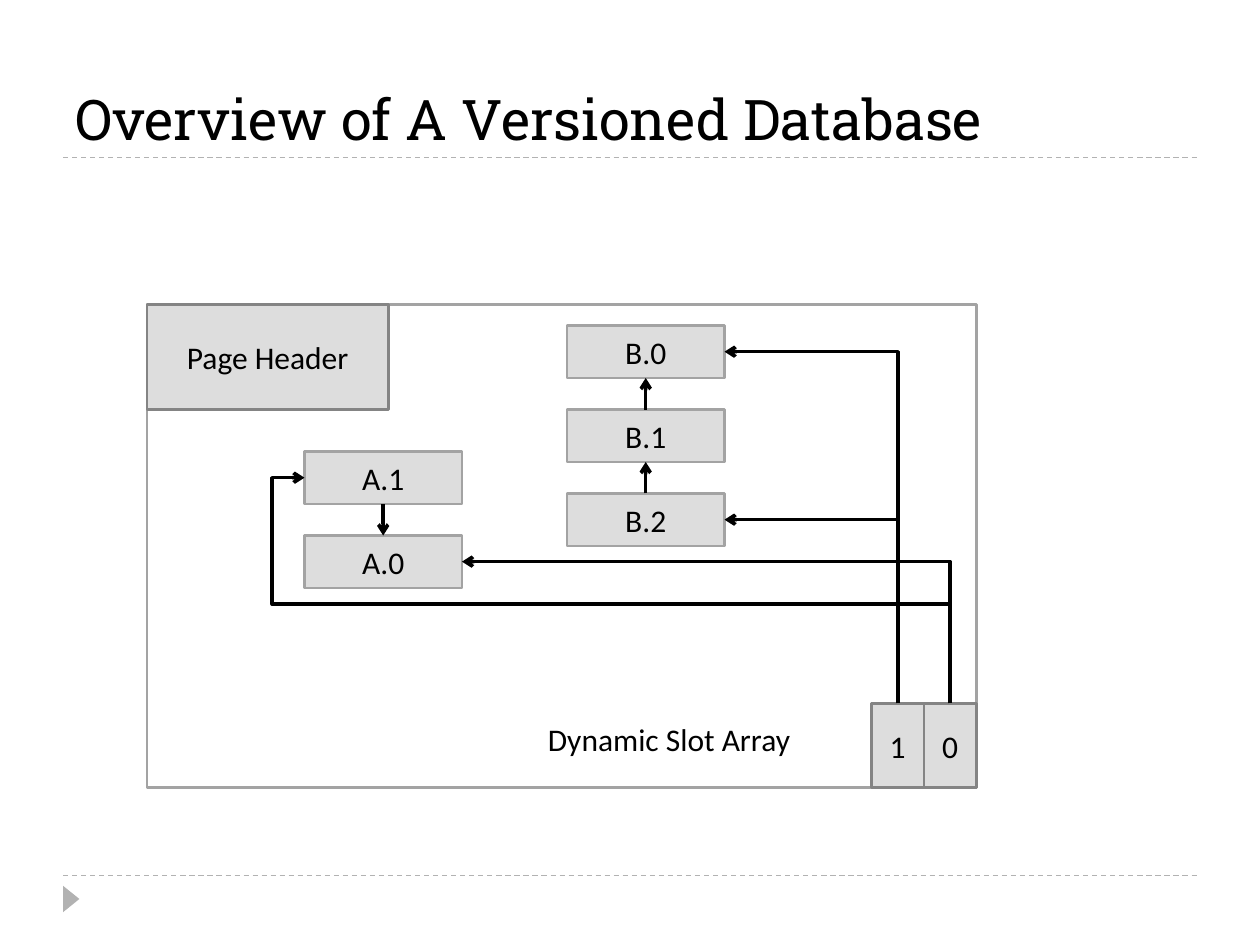
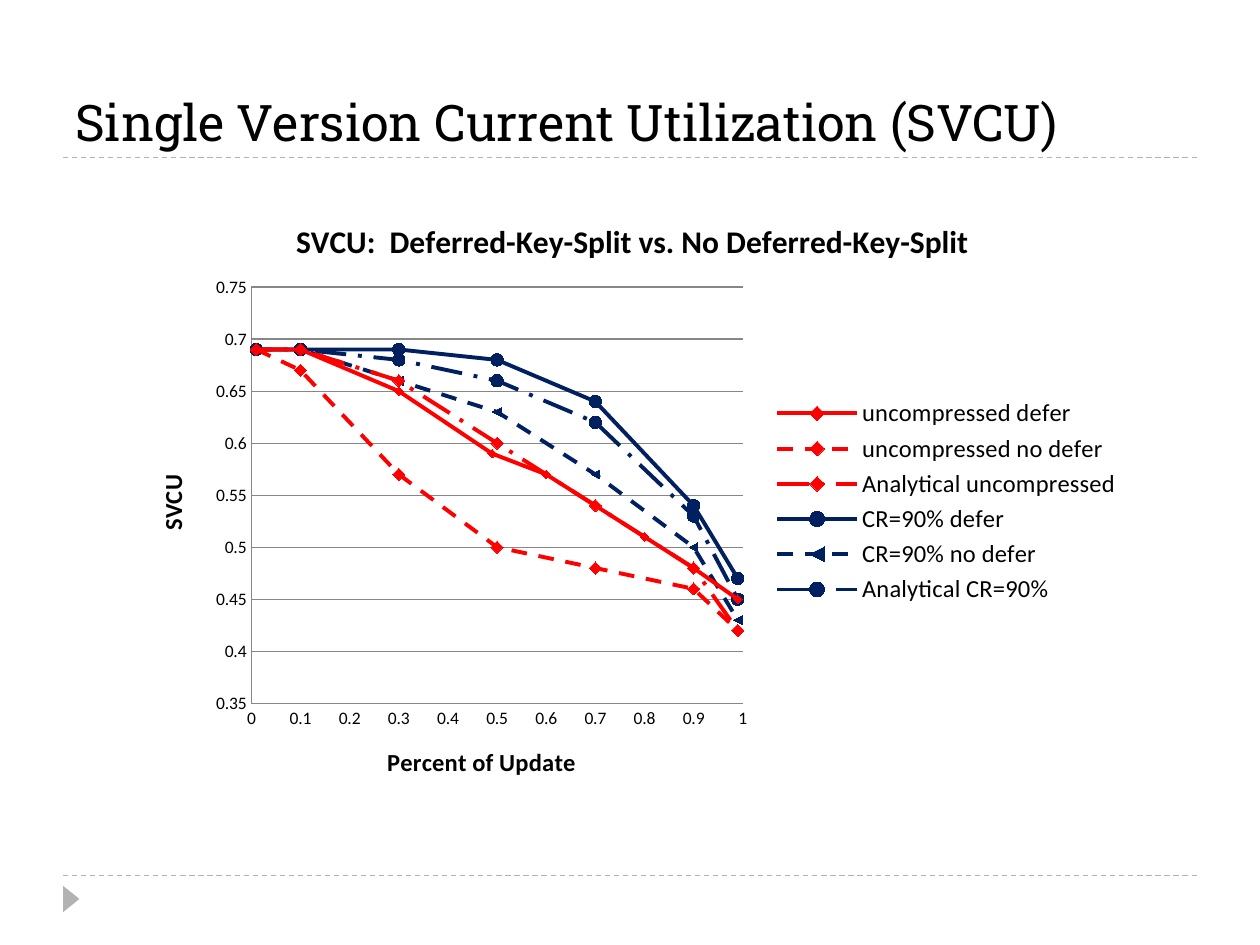
from lxml.etree import SubElement
from pptx import Presentation
from pptx.chart.data import XyChartData
from pptx.dml.color import RGBColor
from pptx.enum.chart import XL_CHART_TYPE, XL_LEGEND_POSITION, XL_MARKER_STYLE, XL_TICK_MARK
from pptx.enum.dml import MSO_LINE
from pptx.enum.shapes import MSO_CONNECTOR, MSO_SHAPE
from pptx.enum.text import MSO_ANCHOR, PP_ALIGN
from pptx.oxml.ns import qn
from pptx.util import Inches, Pt

WIDTH, HEIGHT = 10, 7.5
CELLS_PER_INCH = 12
TITLE_FONT, BODY_FONT = "Roboto Slab", "Calibri"
BLACK, RULE, BOX = "000000", "B2B2B2", "DDDDDD"
BORDER, DARK_BORDER, GRID = "A3A3A3", "848484", "878787"
RED, NAVY = "FF0000", "002060"

RECORD_SIZE = (15, 5)
SLOT_SIZE = (5, 8)
RECORD_STEP = 8

UPDATES = (0.01, 0.1, 0.3, 0.5, 0.7, 0.9, 0.99)
DEFER_UPDATES = (0.01, 0.1, 0.3, 0.49, 0.6, 0.7, 0.8, 0.9, 0.99)
DIAMOND, CIRCLE = XL_MARKER_STYLE.DIAMOND, XL_MARKER_STYLE.CIRCLE
AUTOMATIC = XL_MARKER_STYLE.AUTOMATIC
SOLID, DASH, DASH_DOT = MSO_LINE.SOLID, MSO_LINE.DASH, MSO_LINE.LONG_DASH_DOT
UTILIZATION = [
    ("uncompressed defer", RED, SOLID, AUTOMATIC, 5, DEFER_UPDATES,
     (0.69, 0.69, 0.65, 0.59, 0.57, 0.54, 0.51, 0.48, 0.45)),
    ("uncompressed no defer", RED, DASH, DIAMOND, 7, UPDATES,
     (0.69, 0.67, 0.57, 0.5, 0.48, 0.46, 0.42)),
    ("Analytical uncompressed", RED, DASH_DOT, DIAMOND, 7, UPDATES,
     (0.69, 0.69, 0.66, 0.6, 0.54, 0.48, 0.42)),
    ("CR=90% defer", NAVY, SOLID, CIRCLE, 7, UPDATES,
     (0.69, 0.69, 0.69, 0.68, 0.64, 0.54, 0.47)),
    ("CR=90% no defer", NAVY, DASH, AUTOMATIC, 5, UPDATES,
     (0.69, 0.69, 0.66, 0.63, 0.57, 0.5, 0.43)),
    ("Analytical CR=90%", NAVY, DASH_DOT, CIRCLE, 7, UPDATES,
     (0.69, 0.69, 0.68, 0.66, 0.62, 0.53, 0.45)),
]


def color(value):
    return RGBColor.from_string(value)


def cells(*counts):
    return [Inches(count / CELLS_PER_INCH) for count in counts]


def fill(target, value):
    target.fill.solid()
    target.fill.fore_color.rgb = color(value)


def style_line(line, value, width, dash=None):
    line.color.rgb = color(value)
    line.width = Pt(width)
    if dash:
        line.dash_style = dash


def style_font(font, size, name=BODY_FONT, bold=False):
    font.name, font.size, font.bold = name, Pt(size), bold
    font.color.rgb = color(BLACK)


def add_text(slide, text, box, size, name=BODY_FONT, anchor=MSO_ANCHOR.TOP):
    frame = slide.shapes.add_textbox(*box).text_frame
    frame.word_wrap = True
    frame.vertical_anchor = anchor
    frame.text = text
    style_font(frame.paragraphs[0].font, size, name)


def add_box(slide, column, row, size, text="", border=BORDER, filled=True):
    shape = slide.shapes.add_shape(MSO_SHAPE.RECTANGLE, *cells(column, row, *size))
    shape.shadow.inherit = False
    style_line(shape.line, border, 1.5)
    if filled:
        fill(shape, BOX)
    else:
        shape.fill.background()
    if text:
        frame = shape.text_frame
        frame.text = text
        frame.vertical_anchor = MSO_ANCHOR.MIDDLE
        frame.paragraphs[0].alignment = PP_ALIGN.CENTER
        style_font(frame.paragraphs[0].font, 18)


def add_line(slide, start, end, value, width, dash=None, kind=MSO_CONNECTOR.STRAIGHT):
    connector = slide.shapes.add_connector(kind, *cells(*start, *end))
    style_line(connector.line, value, width, dash)
    SubElement(connector._element.spPr, qn("a:effectLst"))
    return connector


def add_arrow(slide, start, end, kind=MSO_CONNECTOR.STRAIGHT):
    connector = add_line(slide, start, end, BLACK, 2, kind=kind)
    SubElement(connector.line._get_or_add_ln(), qn("a:tailEnd"), type="arrow")
    return connector


def add_bent_arrow(slide, start, end, preset="bentConnector2", adjustments=()):
    rise, run = start[1] - end[1], start[0] - end[0]
    middle_x, middle_y = (start[0] + end[0]) / 2, (start[1] + end[1]) / 2
    connector = add_arrow(
        slide,
        (middle_x - rise / 2, middle_y + run / 2),
        (middle_x + rise / 2, middle_y - run / 2),
        MSO_CONNECTOR.ELBOW,
    )
    properties = connector._element.spPr
    properties.find(qn("a:xfrm")).set("rot", str(270 * 60000))
    geometry = properties.find(qn("a:prstGeom"))
    geometry.set("prst", preset)
    values = geometry.find(qn("a:avLst"))
    for number, share in enumerate(adjustments, 1):
        SubElement(values, qn("a:gd"), name=f"adj{number}", fmla=f"val {round(share * 100000)}")


def add_titled_slide(presentation, title, title_size):
    slide = presentation.slides.add_slide(presentation.slide_layouts[6])
    for row in (83.4, 15):
        add_line(slide, (6, row), (114, row), RULE, 0.75, MSO_LINE.DASH)
    marker = slide.shapes.add_shape(
        MSO_SHAPE.ISOSCELES_TRIANGLE, Inches(0.46), Inches(7.07), Inches(0.21), Inches(0.13))
    marker.rotation = 90
    marker.shadow.inherit = False
    fill(marker, RULE)
    marker.line.fill.background()
    add_text(slide, title, cells(6, 2, 108, 13), title_size, TITLE_FONT, MSO_ANCHOR.BOTTOM)
    return slide


def add_page_diagram(slide):
    add_box(slide, 14, 29, (79, 46), filled=False)
    add_box(slide, 14, 29, (23, 10), "Page Header", DARK_BORDER)
    add_text(slide, "Dynamic Slot Array", cells(51, 68, 26, 4.8), 18)
    for column, text in ((88, "0"), (83, "1")):
        add_box(slide, column, 67, SLOT_SIZE, text, DARK_BORDER)
    for order, text in enumerate(("A.1", "A.0")):
        add_box(slide, 29, 43 + order * RECORD_STEP, RECORD_SIZE, text)
    for order in range(3):
        add_box(slide, 54, 31 + order * RECORD_STEP, RECORD_SIZE, f"B.{order}")

    add_arrow(slide, (36.5, 48), (36.5, 51))
    for row in (39, 47):
        add_arrow(slide, (61.5, row), (61.5, row - 3))
    slot_zero, slot_one = (90.5, 67), (85.5, 67)
    add_bent_arrow(slide, slot_zero, (44, 53.5))
    add_bent_arrow(slide, slot_zero, (29, 45.5), "bentConnector4", (0.44, 1.05))
    for row in (33.5, 49.5):
        add_bent_arrow(slide, slot_one, (69, row))


def set_heading(owner, text, size):
    frame = owner.text_frame
    frame.text = text
    style_font(frame.paragraphs[0].font, size, bold=True)


def style_axis(axis, title, minimum, maximum, step):
    axis.minimum_scale, axis.maximum_scale, axis.major_unit = minimum, maximum, step
    axis.major_tick_mark = axis.minor_tick_mark = XL_TICK_MARK.NONE
    axis.tick_labels.number_format = "General"
    axis.tick_labels.number_format_is_linked = False
    style_font(axis.tick_labels.font, 10)
    style_line(axis.format.line, GRID, 0.75)
    set_heading(axis.axis_title, title, 14)


def place_plot(chart, x, y, w, h):
    area = chart._chartSpace.chart.plotArea
    for layout in area.findall(qn("c:layout")):
        area.remove(layout)
    layout = SubElement(area, qn("c:layout"))
    area.insert(0, layout)
    manual = SubElement(layout, qn("c:manualLayout"))
    settings = dict(layoutTarget="inner", xMode="edge", yMode="edge", x=x, y=y, w=w, h=h)
    for tag, value in settings.items():
        SubElement(manual, qn(f"c:{tag}"), val=str(value))


def add_utilization_chart(slide):
    data = XyChartData()
    for name, *_, updates, values in UTILIZATION:
        series = data.add_series(name)
        for update, value in zip(updates, values):
            series.add_data_point(update, value)
    chart = slide.shapes.add_chart(
        XL_CHART_TYPE.XY_SCATTER_SMOOTH,
        Inches(1.04), Inches(1.55), Inches(7.96), Inches(4.86), data).chart
    style_font(chart.font, 10)
    set_heading(chart.chart_title, "SVCU:  Deferred-Key-Split vs. No Deferred-Key-Split", 18)
    chart.chart_title.include_in_layout = False
    chart.has_legend = True
    chart.legend.position = XL_LEGEND_POSITION.RIGHT
    chart.legend.include_in_layout = False
    style_font(chart.legend.font, 14)
    style_axis(chart.category_axis, "Percent of Update", 0, 1, 0.1)
    style_axis(chart.value_axis, "SVCU", 0.35, 0.75, 0.05)
    chart.category_axis.has_major_gridlines = False
    chart.value_axis.has_major_gridlines = True
    style_line(chart.value_axis.major_gridlines.format.line, GRID, 0.75)
    place_plot(chart, 0.12, 0.15, 0.49, 0.68)

    plot = chart.plots[0]
    plot.vary_by_categories = False
    for series, (_, value, dash, marker, size, *_) in zip(plot.series, UTILIZATION):
        series.smooth = True
        style_line(series.format.line, value, 2.25, dash)
        series.marker.style, series.marker.size = marker, size
        fill(series.marker.format, value)
        style_line(series.marker.format.line, value, 0.75)


def main():
    presentation = Presentation()
    presentation.slide_width, presentation.slide_height = Inches(WIDTH), Inches(HEIGHT)
    add_page_diagram(add_titled_slide(presentation, "Overview of A Versioned Database", 32))
    add_utilization_chart(
        add_titled_slide(presentation, "Single Version Current Utilization (SVCU)", 28.8))
    presentation.save("out.pptx")


if __name__ == "__main__":
    main()
